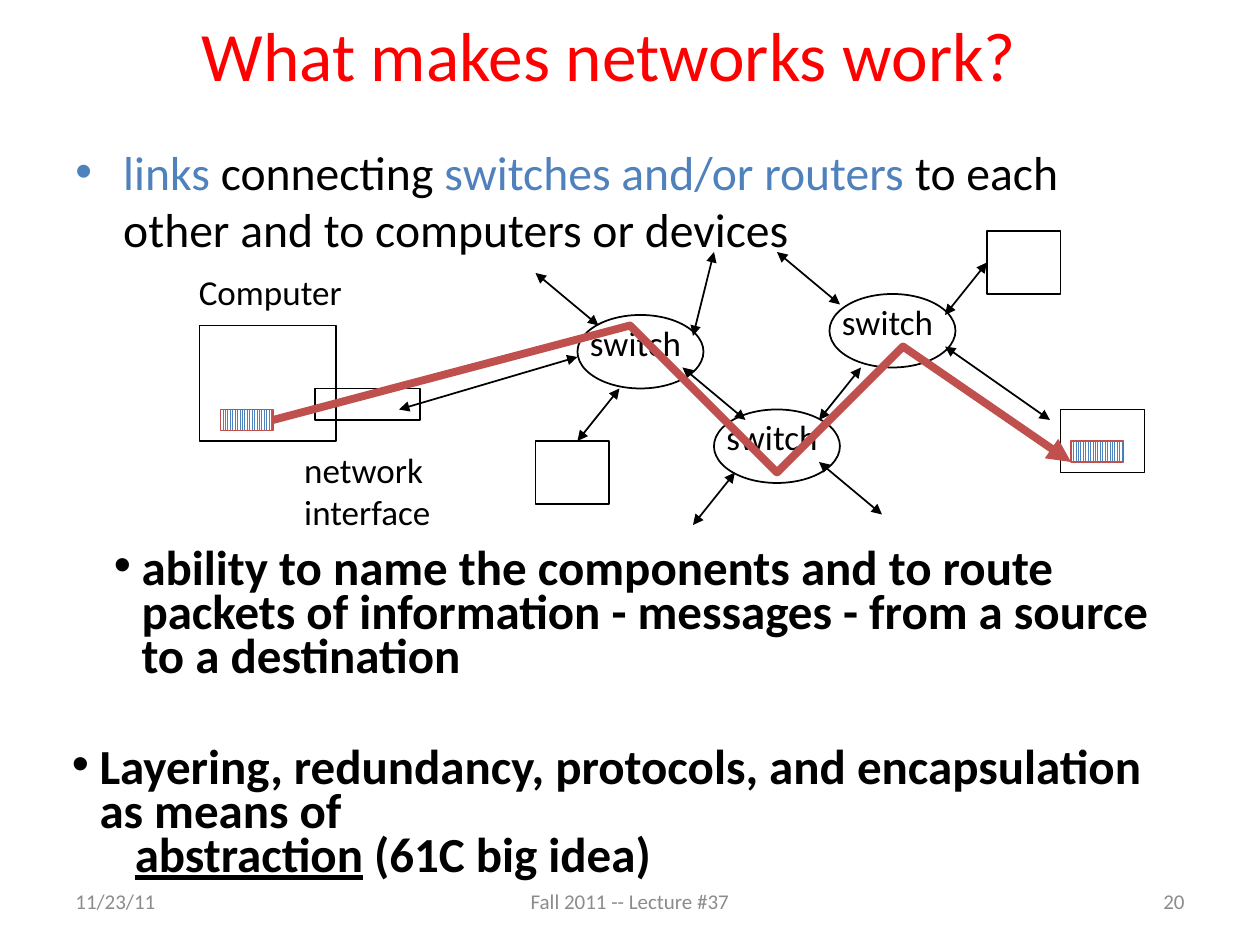
from lxml import etree
from pptx import Presentation
from pptx.dml.color import RGBColor
from pptx.enum.dml import MSO_PATTERN
from pptx.enum.shapes import MSO_CONNECTOR, MSO_SHAPE
from pptx.enum.text import MSO_ANCHOR, MSO_AUTO_SIZE, PP_ALIGN
from pptx.oxml.ns import qn
from pptx.util import Inches, Pt

RECT, OVAL = MSO_SHAPE.RECTANGLE, MSO_SHAPE.OVAL
LEFT, CENTER, RIGHT = PP_ALIGN.LEFT, PP_ALIGN.CENTER, PP_ALIGN.RIGHT
TOP, MIDDLE = MSO_ANCHOR.TOP, MSO_ANCHOR.MIDDLE
STRIPES = MSO_PATTERN.LIGHT_VERTICAL

COLORS = {"title": "FF0000", "ink": "000000", "accent": "4F81BD",
          "route": "C0504D", "paper": "FFFFFF", "footer": "8C8C8C"}
FONT = "Calibri"
CELLS_PER_INCH = 12
SWITCH_SIZE = (12, 7)
PACKET_SIZE = (5, 2)


def grid(*cells):
    """Turn grid cells (a twelfth of an inch each) into lengths."""
    return [Inches(cell / CELLS_PER_INCH) for cell in cells]


def color(name):
    return RGBColor.from_string(COLORS[name])


def add_arrowheads(shape, *ends):
    line = shape.line._get_or_add_ln()
    for end in ends:
        etree.SubElement(line, qn(f"a:{end}"), type="triangle")


def write(para, text, *, size, ink="ink", bold=False, underline=False):
    """Add text to a paragraph; a newline becomes a line break."""
    for number, part in enumerate(text.split("\n")):
        if number:
            para.add_line_break()
        span = para.add_run()
        span.text = part
        font = span.font
        font.name, font.size = FONT, Pt(size)
        font.bold, font.underline = bold, underline
        font.color.rgb = color(ink)


class NetworkSlide:
    def __init__(self, deck):
        self.slide = deck.slides.add_slide(deck.slide_layouts[6])
        self.shapes = self.slide.shapes

    def start_group(self):
        self.shapes = self.slide.shapes.add_group_shape().shapes

    def end_group(self):
        self.shapes = self.slide.shapes

    def text(self, at, paragraphs, *, size, align=LEFT, anchor=TOP, wrap=True,
             grow=False, inset=(0.1, 0.05), indent=0, spacing=None, **style):
        """Each paragraph is a list of (text, extra style) pairs."""
        box = self.shapes.add_textbox(*grid(*at))
        frame = box.text_frame
        frame.word_wrap, frame.vertical_anchor = wrap, anchor
        frame.auto_size = MSO_AUTO_SIZE.SHAPE_TO_FIT_TEXT if grow else MSO_AUTO_SIZE.NONE
        frame.margin_left = frame.margin_right = Inches(inset[0])
        frame.margin_top = frame.margin_bottom = Inches(inset[1])
        for number, spans in enumerate(paragraphs):
            para = frame.add_paragraph() if number else frame.paragraphs[0]
            para.alignment = align
            if spacing:
                para.line_spacing = spacing
            if indent:
                self.bullet(para, indent)
            for text, extra in spans:
                write(para, text, size=size, **{**style, **extra})

    def bullet(self, para, indent):
        properties = para._p.get_or_add_pPr()
        properties.set("marL", str(Inches(indent)))
        properties.set("indent", str(-Inches(indent)))
        etree.SubElement(properties, qn("a:buFont"), typeface="Arial")
        etree.SubElement(properties, qn("a:buChar"), char="•")

    def key_point(self, at, spans):
        self.text(at, [spans], size=28, bold=True, grow=True,
                  inset=(0.07, 0.03), indent=0.22, spacing=0.75)

    def label(self, at, *lines):
        self.text(at, [[(line, {})] for line in lines], size=20,
                  wrap=False, grow=True)

    def footer(self, left, width, text, align):
        self.text((left, 83.4, width, 4.8), [[(text, {})]], size=12,
                  ink="footer", align=align, anchor=MIDDLE)

    def outline(self, kind, at, line="ink"):
        shape = self.shapes.add_shape(kind, *grid(*at))
        shape.shadow.inherit = False
        shape.fill.background()
        shape.line.color.rgb = color(line)
        shape.line.width = Pt(1)
        return shape

    def switch(self, left, top):
        self.outline(OVAL, (left, top, *SWITCH_SIZE))
        self.label((left, top, 11.75, 5.25), "switch")

    def packet(self, left, top):
        fill = self.outline(RECT, (left, top, *PACKET_SIZE), "route").fill
        fill.patterned()
        fill.pattern = STRIPES
        fill.fore_color.rgb = color("accent")
        fill.back_color.rgb = color("paper")

    def link(self, *ends):
        link = self.shapes.add_connector(MSO_CONNECTOR.STRAIGHT, *grid(*ends))
        link.line.color.rgb = color("ink")
        link.line.width = Pt(1)
        add_arrowheads(link, "headEnd", "tailEnd")
        etree.SubElement(link._element.spPr, qn("a:effectLst"))

    def route(self, start, *stops):
        builder = self.shapes.build_freeform(*start, scale=Inches(1) / CELLS_PER_INCH)
        builder.add_line_segments(stops, close=False)
        route = builder.convert_to_shape()
        route.shadow.inherit = False
        route.fill.background()
        route.line.color.rgb = color("route")
        route.line.width = Pt(4.5)
        add_arrowheads(route, "tailEnd")


def draw_network(page):
    page.start_group()
    for at in [(19, 31, 13, 11), (30, 37, 10, 3), (101, 39, 8, 6),
               (51, 42, 7, 6), (94, 22, 7, 6)]:
        page.outline(RECT, at)
    page.label((17.75, 25.2, 17.2, 5.25), "Computer")
    page.label((27.8, 42.1, 15.4, 9.25), "network", "interface")
    for corner in [(55, 30), (68, 39), (79, 28)]:
        page.switch(*corner)
    for ends in [(38, 39, 55, 34), (55, 42, 59, 37), (78, 40, 82, 35),
                 (57, 31, 51, 26), (71, 40, 65, 35), (84, 49, 78, 44),
                 (100, 40, 90, 33), (90, 30, 94, 25), (66, 32, 68, 24),
                 (66, 50, 70, 45), (80, 29, 74, 24)]:
        page.link(*ends)
    page.end_group()


def main():
    deck = Presentation()
    deck.slide_width, deck.slide_height = Inches(10), Inches(7.5)
    page = NetworkSlide(deck)

    page.text((10, 2, 96, 6.25), [[("What makes networks work?", {})]],
              size=39.6, ink="title", align=CENTER, anchor=MIDDLE)
    accent = {"ink": "accent"}
    page.text((6, 13, 103, 10.2),
              [[("links", accent), (" connecting ", {}),
                ("switches and/or routers ", accent),
                ("to each other and to computers or devices", {})]],
              size=27.2, indent=0.38)
    draw_network(page)
    page.key_point((10, 52, 103, 13.3), [
        ("ability to name the components and to route packets of information"
         " - messages - from a source to a destination", {})])

    page.packet(21, 39)
    page.start_group()
    page.route((26, 40), (60, 31), (74, 45), (86, 33), (102, 44))
    page.packet(102, 42)
    page.end_group()

    page.key_point((6, 71, 108, 13.3), [
        ("Layering, redundancy, protocols, and encapsulation as means of \n\t", {}),
        ("abstraction", {"underline": True}),
        (" (61C big idea)", {})])

    page.footer(6, 28, "11/23/11", LEFT)
    page.footer(86, 28, "20", RIGHT)
    page.footer(41, 38, "Fall 2011 -- Lecture #37", CENTER)
    deck.save("out.pptx")


if __name__ == "__main__":
    main()
